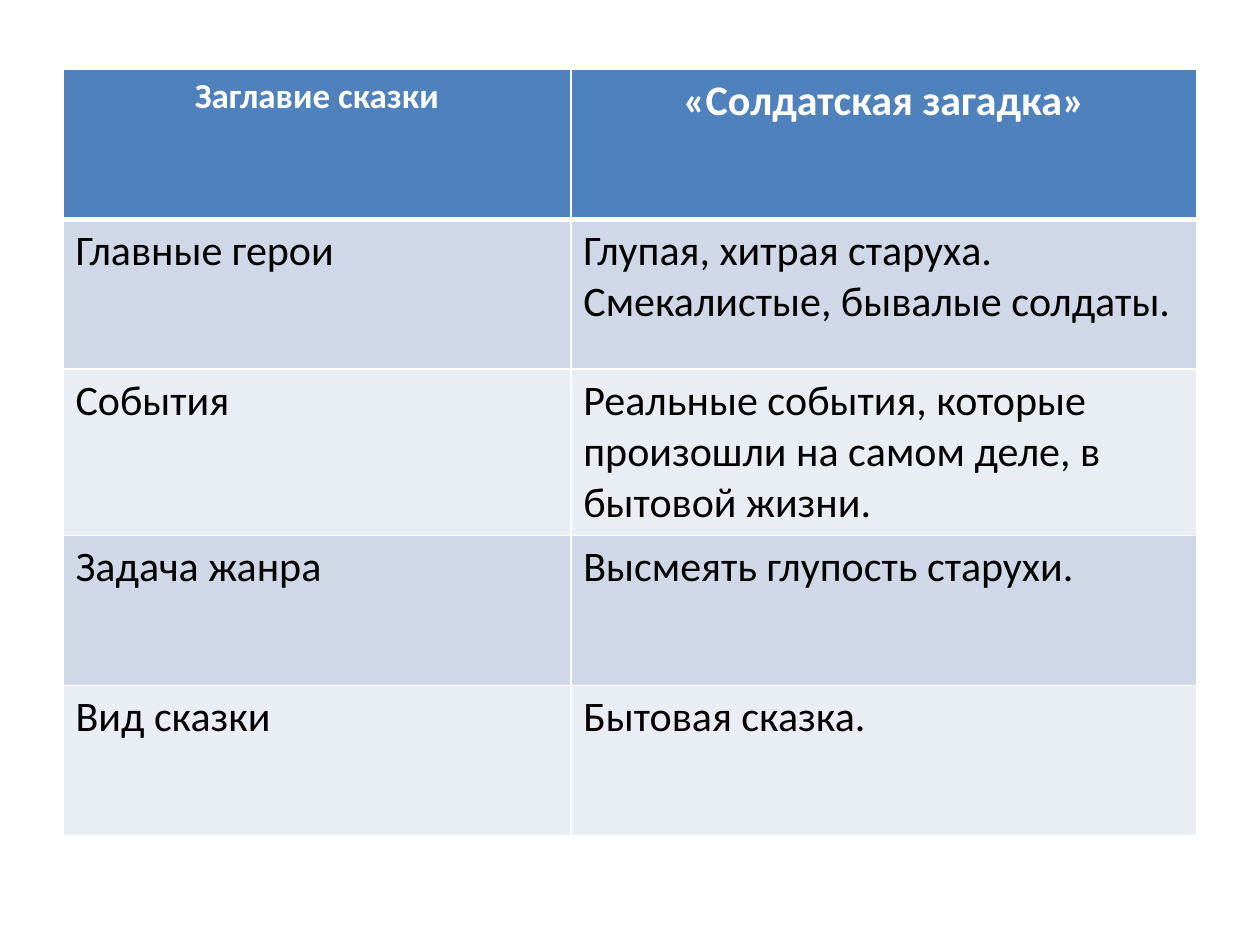
from dataclasses import dataclass

from lxml.etree import SubElement
from pptx import Presentation
from pptx.dml.color import RGBColor
from pptx.enum.text import PP_ALIGN as Align
from pptx.oxml.ns import qn
from pptx.table import _Cell as Cell
from pptx.util import Inches, Pt

WHITE, BLACK, HEADER_BLUE = "FFFFFF", "000000", "4F81BD"
BANDS = ("D0D8E8", "E9EDF4")
COLUMN_WIDTHS = (4.03, 4.97)
ROW_HEIGHT = 1.19


@dataclass
class Feature:
    label: str
    details: tuple[str, ...]


@dataclass
class CellStyle:
    fill: str
    color: str = BLACK
    size: int = 24
    bold: bool = False
    align: Align = Align.LEFT
    bottom_line: int = 1


FEATURES = (
    Feature("Главные герои", ("Глупая, хитрая старуха.", "Смекалистые, бывалые солдаты.")),
    Feature("События", ("Реальные события, которые произошли на самом деле, в бытовой жизни.",)),
    Feature("Задача жанра", ("Высмеять глупость старухи.",)),
    Feature("Вид сказки", ("Бытовая сказка.",)),
)


def rgb(value: str) -> RGBColor:
    return RGBColor.from_string(value)


def draw_borders(cell: Cell, top: int, bottom: int) -> None:
    properties = cell._tc.get_or_add_tcPr()
    for side, width in (("L", 1), ("R", 1), ("T", top), ("B", bottom)):
        line = SubElement(properties, qn(f"a:ln{side}"), w=str(Pt(width)))
        SubElement(SubElement(line, qn("a:solidFill")), qn("a:srgbClr"), val=WHITE)


def fill_cell(cell: Cell, lines: tuple[str, ...], style: CellStyle, top_line: int = 1) -> None:
    draw_borders(cell, top_line, style.bottom_line)
    cell.fill.solid()
    cell.fill.fore_color.rgb = rgb(style.fill)
    frame = cell.text_frame
    for index, line in enumerate(lines):
        paragraph = frame.add_paragraph() if index else frame.paragraphs[0]
        paragraph.alignment = style.align
        run = paragraph.add_run()
        run.text = line
        run.font.name = "Calibri"
        run.font.size = Pt(style.size)
        run.font.bold = style.bold
        run.font.color.rgb = rgb(style.color)


def main() -> None:
    deck = Presentation()
    deck.slide_width, deck.slide_height = Inches(10), Inches(7.5)
    slide = deck.slides.add_slide(deck.slide_layouts[6])
    row_count = len(FEATURES) + 1
    tale = slide.shapes.add_table(
        row_count, len(COLUMN_WIDTHS), Inches(0.5), Inches(0.55),
        Inches(sum(COLUMN_WIDTHS)), Inches(ROW_HEIGHT * row_count),
    ).table
    for column, width in zip(tale.columns, COLUMN_WIDTHS):
        column.width = Inches(width)
    for row in tale.rows:
        row.height = Inches(ROW_HEIGHT)

    for column, (heading, size) in enumerate((("Заглавие сказки", 20), ("«Солдатская загадка»", 24))):
        style = CellStyle(HEADER_BLUE, WHITE, size, True, Align.CENTER, 3)
        fill_cell(tale.cell(0, column), (heading,), style)
    for row, feature in enumerate(FEATURES, start=1):
        style = CellStyle(BANDS[(row - 1) % 2])
        top_line = 3 if row == 1 else 1
        fill_cell(tale.cell(row, 0), (feature.label,), style, top_line)
        fill_cell(tale.cell(row, 1), feature.details, style, top_line)

    deck.save("out.pptx")


if __name__ == "__main__":
    main()
